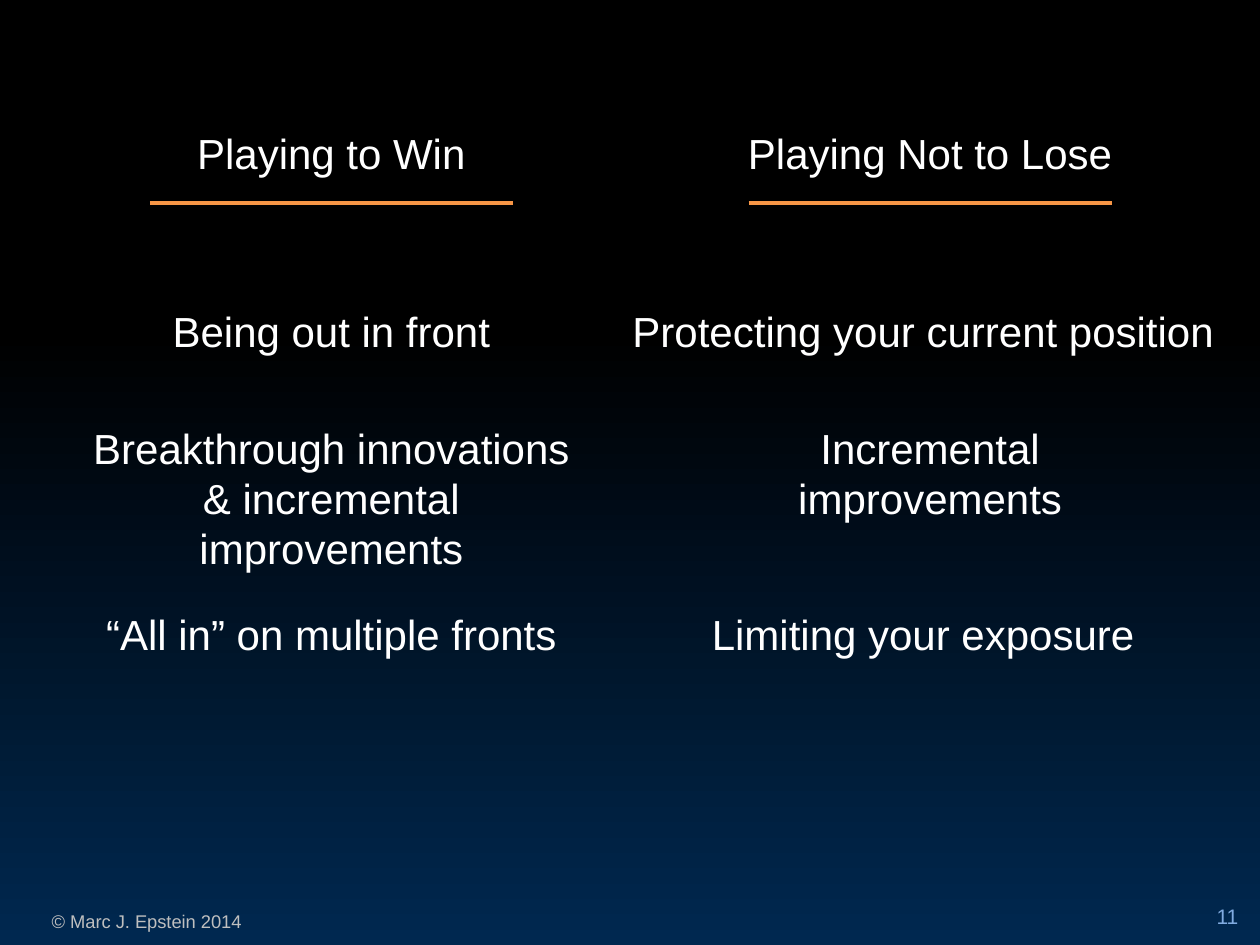
from pptx import Presentation
from pptx.dml.color import RGBColor
from pptx.enum import shapes, text
from pptx.oxml.ns import qn
from pptx.util import Cm, Pt
from lxml import etree

COLORS = {
    "top": "000000",
    "bottom": "002850",
    "body": "FFFFFF",
    "rule": "F79646",
    "footer": "BFBFBF",
    "number": "81ABE0",
}
MIDDLE = text.MSO_ANCHOR.MIDDLE
TOP = text.MSO_ANCHOR.TOP
BOTTOM = text.MSO_ANCHOR.BOTTOM
CENTER = text.PP_ALIGN.CENTER
RIGHT = text.PP_ALIGN.RIGHT


class SlideBuilder:
    font = "Arial"

    def __init__(self, page):
        self.page = page

    def color(self, name):
        return RGBColor.from_string(COLORS[name])

    def background(self, start):
        fill = self.page.background.fill
        fill.gradient()
        fill.gradient_angle = 270
        for stop, position, name in zip(fill.gradient_stops, (start, 1), ("top", "bottom")):
            stop.position = position
            stop.color.rgb = self.color(name)

    def label(self, words, center, top, width, height, size=24, color="body",
              anchor=MIDDLE, align=CENTER, wrap=True, inset=0):
        box = self.page.shapes.add_textbox(
            Cm(center - width / 2), Cm(top), Cm(width), Cm(height))
        frame = box.text_frame
        frame.word_wrap = wrap
        frame.vertical_anchor = anchor
        frame.margin_left = frame.margin_right = 0
        frame.margin_top = frame.margin_bottom = Cm(inset)
        para = frame.paragraphs[0]
        para.text = words
        para.alignment = align
        para.font.name = self.font
        para.font.size = Pt(size)
        para.font.color.rgb = self.color(color)

    def rule(self, center, y, width):
        line = self.page.shapes.add_connector(
            shapes.MSO_CONNECTOR.STRAIGHT,
            Cm(center - width / 2), Cm(y), Cm(center + width / 2), Cm(y))
        line.line.color.rgb = self.color("rule")
        line.line.width = Pt(2)
        etree.SubElement(line._element.spPr, qn("a:effectLst"))


def main():
    deck = Presentation()
    deck.slide_width, deck.slide_height = Cm(25.4), Cm(19.05)
    builder = SlideBuilder(deck.slides.add_slide(deck.slide_layouts[6]))
    builder.background(0.35)

    # Column headings with their rules
    left, right = 6.68, 18.75
    for center, heading in ((left, "Playing to Win"), (right, "Playing Not to Lose")):
        builder.label(heading, center, 2.06, 8.84, 2.03)
        builder.rule(center, 4.09, 7.32)

    # Single-line comparisons
    right_line = 18.61
    for center, top, width, words in (
        (left, 6.15, 6.48, "Being out in front"),
        (right_line, 6.15, 11.84, "Protecting your current position"),
        (left, 12.27, 9.17, "“All in” on multiple fronts"),
        (right_line, 12.27, 8.61, "Limiting your exposure"),
    ):
        builder.label(words, center, top, width, 1.02, wrap=False)

    # Wrapped comparison
    builder.label("Breakthrough innovations & incremental improvements",
                  left, 8.51, 9.96, 2.01, anchor=TOP)
    builder.label("Incremental improvements", right, 8.97, 9.83, 1.12)

    # Footer and page number
    builder.label("© Marc J. Epstein 2014", 2.96, 18.21, 6.78, 0.71,
                  size=10.5, color="footer", anchor=TOP, inset=0.13)
    builder.label("11", 23.91, 17.83, 2.11, 1.02, size=12, color="number",
                  anchor=BOTTOM, align=RIGHT, inset=0.13)

    deck.save("out.pptx")


if __name__ == "__main__":
    main()
